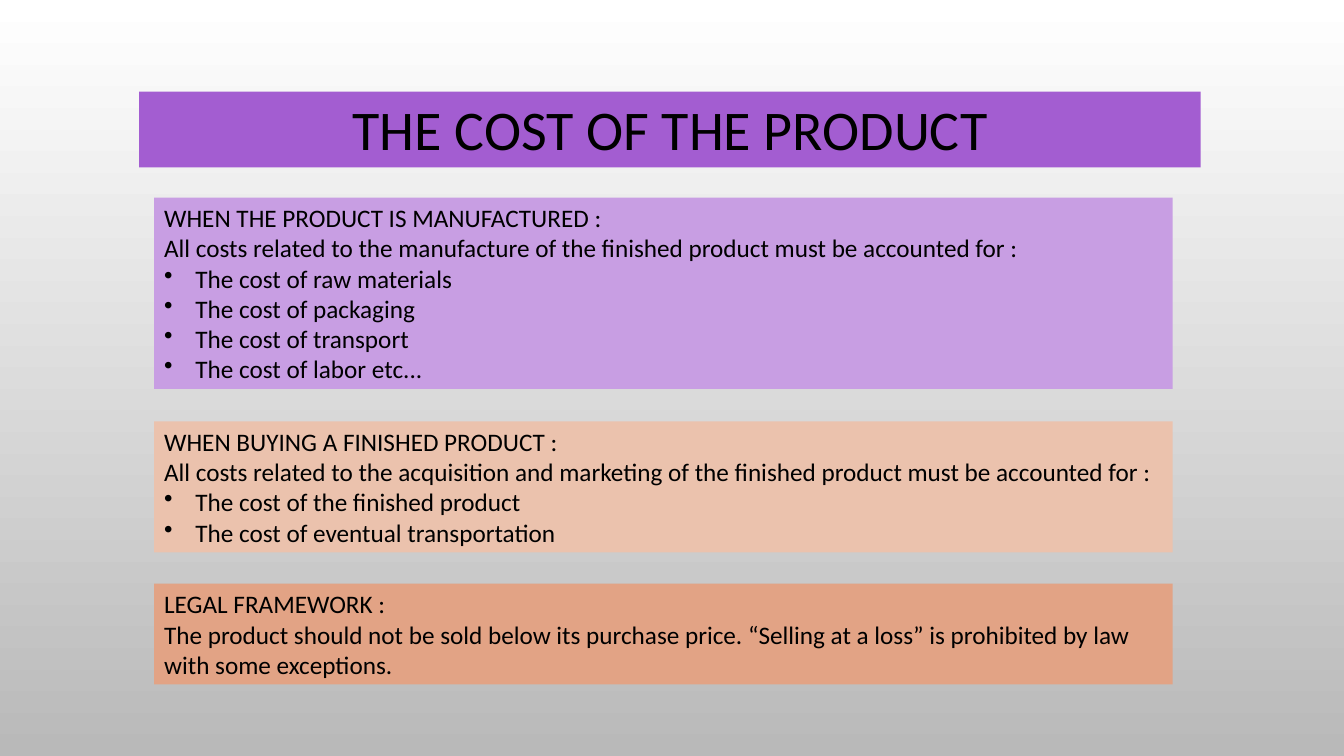
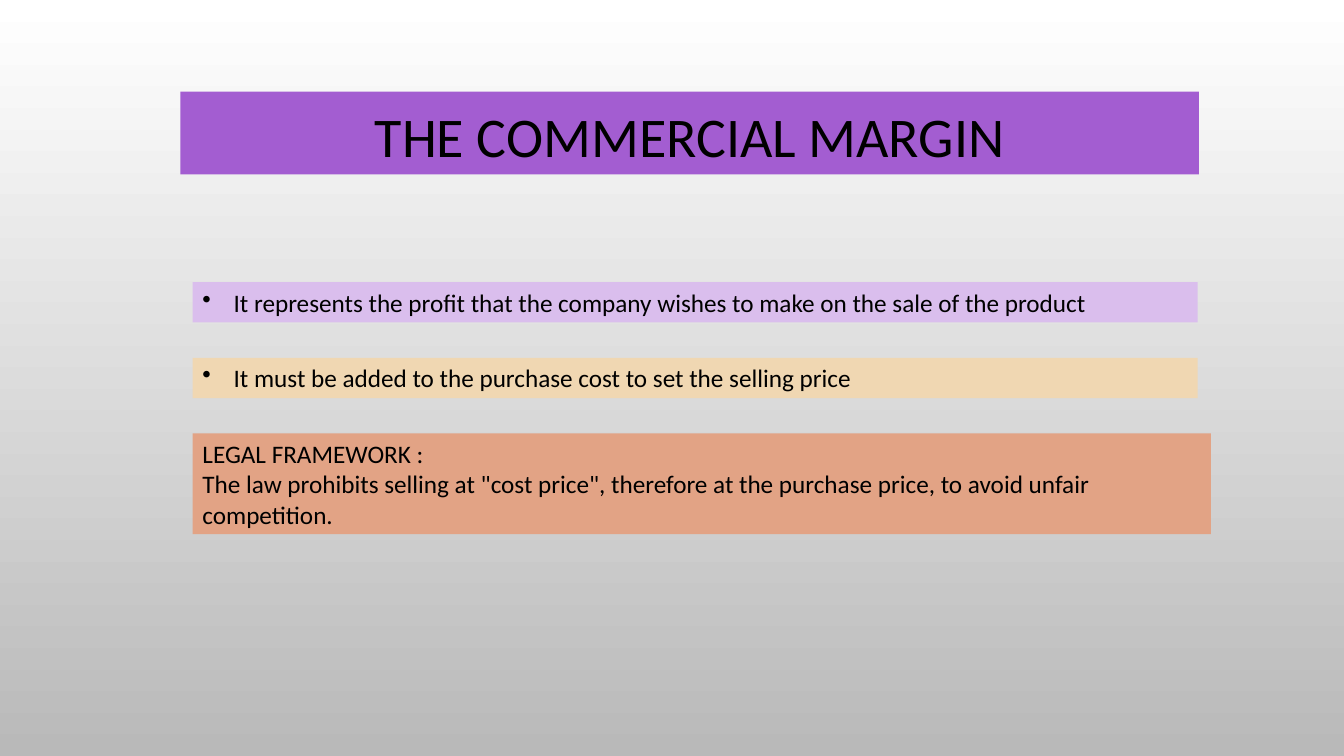
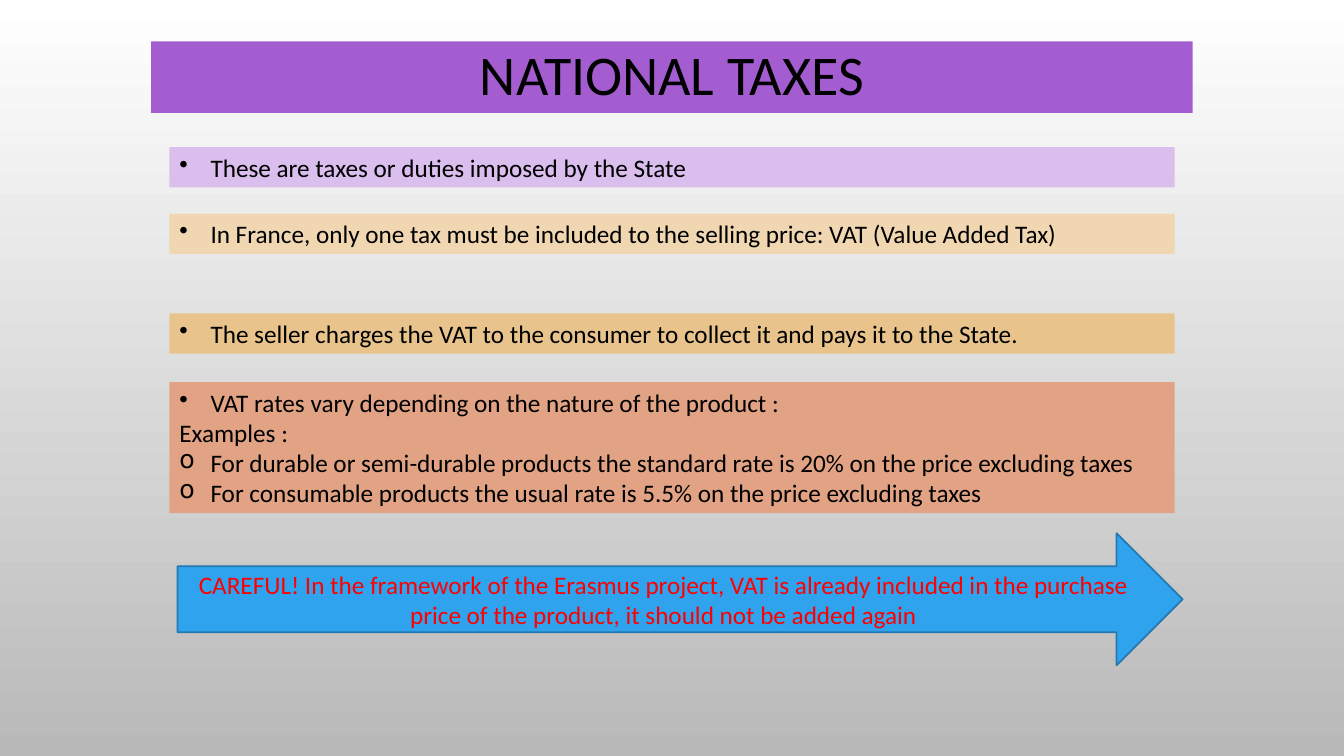
from lxml.etree import SubElement
from pptx import Presentation
from pptx.dml.color import RGBColor
from pptx.enum.shapes import MSO_SHAPE
from pptx.enum.text import MSO_ANCHOR, MSO_AUTO_SIZE, PP_ALIGN
from pptx.oxml.ns import qn
from pptx.util import Inches, Pt

COLORS = {
    "black": "000000",
    "page_top": "FFFFFF",
    "page_bottom": "B9B9B9",
    "title": "A35DD1",
    "violet": "C89EE3",
    "lilac": "DABEED",
    "peach": "EBC2AD",
    "sand": "F0D7B2",
    "gold": "E8C48C",
    "terracotta": "E2A385",
    "arrow": "2FA3EE",
    "arrow_line": "2379B0",
    "warning": "FF0000",
}
FONT = "Calibri"
INDENT = 0.31
LINE_HEIGHT = 0.3
PADDING = 0.1
DOT = "•"
CIRCLE = "o"


def color(name):
    """Return the named colour."""
    return RGBColor.from_string(COLORS[name])


def set_background(master):
    """Give every slide the same vertical gradient."""
    fill = master.background.fill
    fill.gradient()
    fill.gradient_angle = 270
    for stop, name in zip(fill.gradient_stops, ("page_top", "page_bottom")):
        stop.color.rgb = color(name)


def add_filled_shape(slide, kind, box, fill, anchor):
    """Add a borderless filled shape with wrapped text."""
    shape = slide.shapes.add_shape(kind, *(Inches(length) for length in box))
    shape.shadow.inherit = False
    shape.fill.solid()
    shape.fill.fore_color.rgb = color(fill)
    shape.line.fill.background()
    shape.text_frame.word_wrap = True
    shape.text_frame.vertical_anchor = anchor
    return shape


def add_bullet(paragraph, mark):
    """Give a paragraph a hanging bullet."""
    properties = paragraph._p.get_or_add_pPr()
    properties.set("marL", str(Inches(INDENT)))
    properties.set("indent", str(-Inches(INDENT)))
    SubElement(properties, qn("a:buChar")).set("char", mark)


def write(paragraph, text, size=18, ink="black", align=PP_ALIGN.LEFT):
    """Add one styled run to a paragraph."""
    paragraph.alignment = align
    run = paragraph.add_run()
    run.text = text
    run.font.name = FONT
    run.font.size = Pt(size)
    run.font.color.rgb = color(ink)


def add_title(slide, box, text):
    """Add the title band."""
    band = add_filled_shape(slide, MSO_SHAPE.RECTANGLE, box, "title", MSO_ANCHOR.BOTTOM)
    paragraph = band.text_frame.paragraphs[0]
    paragraph.line_spacing = 0.9
    write(paragraph, text, size=40, align=PP_ALIGN.CENTER)


def add_panel(slide, left, top, width, fill, rows, line_count=None):
    """Add a coloured panel from (bullet mark, text) rows."""
    height = PADDING + LINE_HEIGHT * (line_count or len(rows))
    panel = add_filled_shape(
        slide, MSO_SHAPE.RECTANGLE, (left, top, width, height), fill, MSO_ANCHOR.TOP
    )
    frame = panel.text_frame
    frame.auto_size = MSO_AUTO_SIZE.SHAPE_TO_FIT_TEXT
    for index, (mark, text) in enumerate(rows):
        paragraph = frame.add_paragraph() if index else frame.paragraphs[0]
        if mark:
            add_bullet(paragraph, mark)
        write(paragraph, text)


def add_legal_panel(slide, left, top, text):
    """Add the legal framework panel, whose text takes two lines."""
    rows = [(None, "LEGAL FRAMEWORK :"), (None, text)]
    add_panel(slide, left, top, 10.1, "terracotta", rows, line_count=3)


def add_warning_arrow(slide, box, text):
    """Add the outlined arrow with its warning."""
    arrow = add_filled_shape(
        slide, MSO_SHAPE.RIGHT_ARROW, box, "arrow", MSO_ANCHOR.MIDDLE
    )
    arrow.line.color.rgb = color("arrow_line")
    arrow.line.width = Pt(1.25)
    write(arrow.text_frame.paragraphs[0], text, ink="warning", align=PP_ALIGN.CENTER)


def build_cost(slide):
    """Build the product cost slide."""
    left, width = 1.53, 10.1
    add_title(slide, (1.38, 0.91, 10.53, 0.75), "THE COST OF THE PRODUCT")
    add_panel(slide, left, 1.96, width, "violet", [
        (None, "WHEN THE PRODUCT IS MANUFACTURED :"),
        (None, "All costs related to the manufacture of the finished product must be accounted for :"),
        (DOT, "The cost of raw materials"),
        (DOT, "The cost of packaging"),
        (DOT, "The cost of transport"),
        (DOT, "The cost of labor etc..."),
    ])
    add_panel(slide, left, 4.18, width, "peach", [
        (None, "WHEN BUYING A FINISHED PRODUCT :"),
        (None, "All costs related to the acquisition and marketing of the finished product must be accounted for :"),
        (DOT, "The cost of the finished product"),
        (DOT, "The cost of eventual transportation"),
    ])
    add_legal_panel(
        slide, left, 5.79,
        "The product should not be sold below its purchase price. “Selling at a loss” is prohibited by law with some exceptions.",
    )


def build_margin(slide):
    """Build the commercial margin slide."""
    left, top, step = 1.91, 2.8, 0.75
    add_title(slide, (1.79, 0.91, 10.1, 0.82), "THE COMMERCIAL MARGIN")
    points = [
        ("lilac", "It represents the profit that the company wishes to make on the sale of the product"),
        ("sand", "It must be added to the purchase cost to set the selling price"),
    ]
    for index, (fill, text) in enumerate(points):
        add_panel(slide, left, top + index * step, 9.97, fill, [(DOT, text)])
    add_legal_panel(
        slide, left, top + len(points) * step,
        'The law prohibits selling at "cost price", therefore at the purchase price, to avoid unfair competition.',
    )


def build_taxes(slide):
    """Build the national taxes slide."""
    left, width = 1.68, 9.97
    add_title(slide, (1.5, 0.41, 10.33, 0.71), "NATIONAL TAXES")
    points = [
        (1.46, "lilac", "These are taxes or duties imposed by the State"),
        (2.12, "sand", "In France, only one tax must be included to the selling price: VAT (Value Added Tax)"),
        (3.11, "gold", "The seller charges the VAT to the consumer to collect it and pays it to the State."),
    ]
    for top, fill, text in points:
        add_panel(slide, left, top, width, fill, [(DOT, text)])
    add_panel(slide, left, 3.79, width, "terracotta", [
        (DOT, "VAT rates vary depending on the nature of the product :"),
        (None, "Examples :"),
        (CIRCLE, "For durable or semi-durable products the standard rate is 20% on the price excluding taxes"),
        (CIRCLE, "For consumable products the usual rate is 5.5% on the price excluding taxes"),
    ])
    add_warning_arrow(
        slide, (1.76, 5.29, width, 1.31),
        "CAREFUL! In the framework of the Erasmus project, VAT is already included in the purchase price of the product, it should not be added again",
    )


def main():
    """Build and save the presentation."""
    presentation = Presentation()
    presentation.slide_width = Inches(13.33)
    presentation.slide_height = Inches(7.5)
    set_background(presentation.slide_master)
    for build in (build_cost, build_margin, build_taxes):
        build(presentation.slides.add_slide(presentation.slide_layouts[6]))
    presentation.save("out.pptx")


if __name__ == "__main__":
    main()
